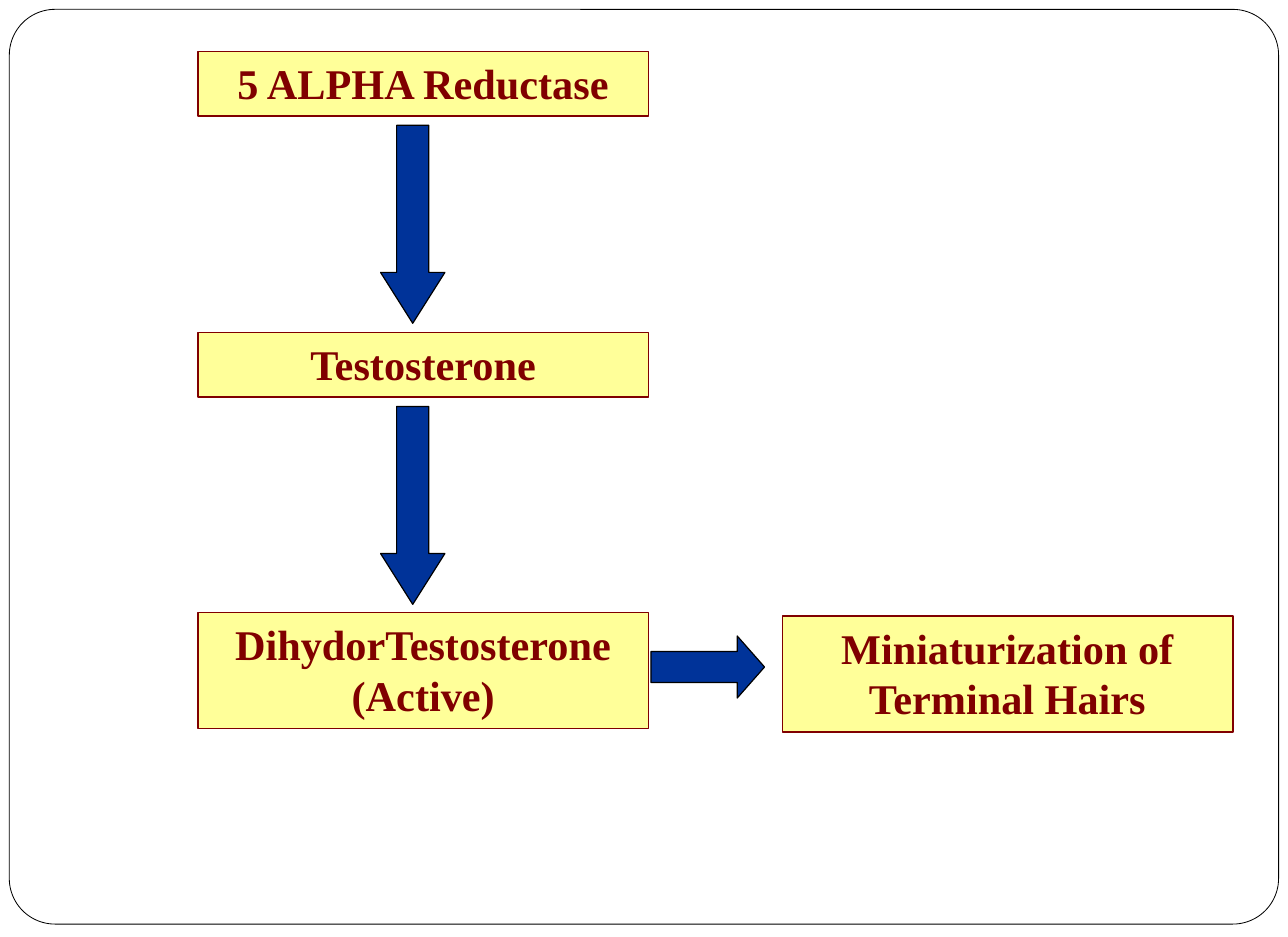
from dataclasses import dataclass

from pptx import Presentation
from pptx.dml.color import RGBColor
from pptx.enum import shapes as kinds, text as layout
from pptx.util import Inches, Pt

COLOURS = {
    "paper": "FFFFFF",
    "ink": "000000",
    "step": "FFFF99",
    "maroon": "800000",
    "arrow": "003399",
}
STEP_WIDTH = 3.85
PATHWAY_LEFT = 1.69


@dataclass(frozen=True)
class Step:
    wording: str
    left: float
    top: float
    height: float


@dataclass(frozen=True)
class Arrow:
    left: float
    top: float
    width: float
    height: float
    head: float
    rotation: float = 0


STEPS = [
    Step("5 ALPHA Reductase", PATHWAY_LEFT, 0.44, 0.55),
    Step("Testosterone", PATHWAY_LEFT, 2.84, 0.55),
    Step("DihydorTestosterone (Active)", PATHWAY_LEFT, 5.23, 0.99),
    Step("Miniaturization of Terminal Hairs", 6.68, 5.26, 0.99),
]
ARROWS = [Arrow(3.25, top, 0.55, 1.69, 0.79) for top in (1.07, 3.47)]
ARROWS.append(Arrow(5.78, 5.21, 0.53, 0.97, 0.44, rotation=270))


def rgb(name: str) -> RGBColor:
    return RGBColor.from_string(COLOURS[name])


def add_outlined(slide, kind, box: tuple, fill: str, line: str, weight: float = 0.75):
    """Add a flat preset shape; box is left, top, width, height in inches."""
    outlined = slide.shapes.add_shape(kind, *map(Inches, box))
    outlined.shadow.inherit = False
    outlined.fill.solid()
    outlined.fill.fore_color.rgb = rgb(fill)
    outlined.line.color.rgb = rgb(line)
    outlined.line.width = Pt(weight)
    return outlined


def add_frame(slide) -> None:
    frame = add_outlined(slide, kinds.MSO_SHAPE.ROUNDED_RECTANGLE,
                         (0.08, 0.08, 10.84, 7.81), "paper", "ink", 0.5)
    frame.adjustments[0] = 0.05


def add_step(slide, step: Step) -> None:
    box = (step.left, step.top, STEP_WIDTH, step.height)
    panel = add_outlined(slide, kinds.MSO_SHAPE.RECTANGLE, box, "step", "maroon")
    frame_format = {
        "word_wrap": True,
        "vertical_anchor": layout.MSO_ANCHOR.TOP,
        "margin_left": Inches(0.11),
        "margin_right": Inches(0.11),
        "margin_top": Inches(0.05),
        "margin_bottom": Inches(0.05),
        "auto_size": layout.MSO_AUTO_SIZE.SHAPE_TO_FIT_TEXT,
    }
    for attribute, value in frame_format.items():
        setattr(panel.text_frame, attribute, value)
    label = panel.text_frame.paragraphs[0]
    label.alignment = layout.PP_ALIGN.CENTER
    wording = label.add_run()
    wording.text = step.wording
    font_format = {"name": "Times New Roman", "size": Pt(26), "bold": True}
    for attribute, value in font_format.items():
        setattr(wording.font, attribute, value)
    wording.font.color.rgb = rgb("maroon")


def add_arrow(slide, arrow: Arrow) -> None:
    box = (arrow.left, arrow.top, arrow.width, arrow.height)
    pointer = add_outlined(slide, kinds.MSO_SHAPE.DOWN_ARROW, box, "arrow", "ink")
    pointer.adjustments[0] = 0.5
    pointer.adjustments[1] = arrow.head
    pointer.rotation = arrow.rotation


def main() -> None:
    deck = Presentation()
    deck.slide_width, deck.slide_height = Inches(11), Inches(8)
    slide = deck.slides.add_slide(deck.slide_layouts[6])
    add_frame(slide)
    for step in STEPS:
        add_step(slide, step)
    for arrow in ARROWS:
        add_arrow(slide, arrow)
    deck.save("out.pptx")


if __name__ == "__main__":
    main()
